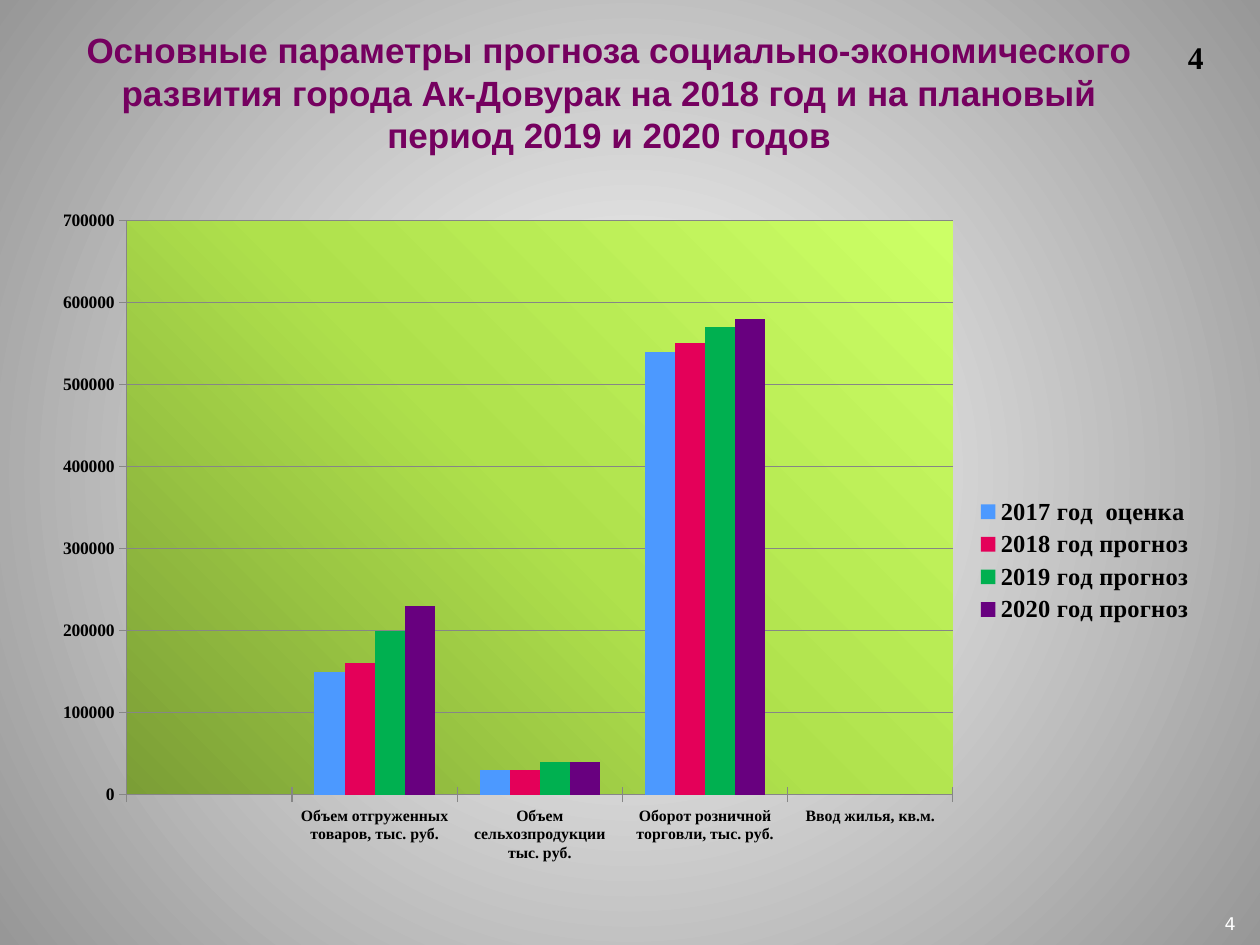
from dataclasses import dataclass

from pptx import Presentation
from pptx.chart.data import CategoryChartData
from pptx.dml.color import RGBColor
from pptx.enum.chart import XL_CHART_TYPE as ChartType, XL_LEGEND_POSITION as LegendPos, XL_TICK_MARK as Tick
from pptx.enum.text import PP_ALIGN as Align
from pptx.oxml import parse_xml
from pptx.oxml.ns import nsdecls, qn
from pptx.util import Inches, Pt

SERIF = "Times New Roman"
CATEGORIES = ["", "Объем отгруженных товаров, тыс. руб.", "Объем сельхозпродукции тыс. руб.",
              "Оборот розничной торговли, тыс. руб.", "Ввод жилья, кв.м."]


@dataclass
class Series:
    name: str
    color: str
    values: tuple


SERIES = [
    Series("2017 год  оценка", "4C99FF", (None, 150000, 30000, 540000, 0)),
    Series("2018 год прогноз", "E40059", (None, 160000, 30000, 550000, 0)),
    Series("2019 год прогноз", "00B050", (None, 200000, 40000, 570000, 0)),
    Series("2020 год прогноз", "68007F", (None, 230000, 40000, 580000, 0)),
]


def rgb(color: str) -> RGBColor:
    return RGBColor.from_string(color)


def set_font(font, size: float, color="000000", name=SERIF, bold=True) -> None:
    font.size, font.name, font.bold = Pt(size), name, bold
    font.color.rgb = rgb(color)


def add_text(s, text: str, box: tuple, margins=(0, 0), align=Align.LEFT, **fmt) -> None:
    tf = s.shapes.add_textbox(*map(Inches, box)).text_frame
    tf.word_wrap = True
    tf.margin_left = tf.margin_right = Inches(margins[0])
    tf.margin_top = tf.margin_bottom = Inches(margins[1])
    p = tf.paragraphs[0]
    p.alignment = align
    r = p.add_run()
    r.text = text
    set_font(r.font, **fmt)


def gradient(stops: list, direction: str) -> str:
    gs = "".join(f'<a:gs pos="{pos * 1000}"><a:srgbClr val="{c}"/></a:gs>' for pos, c in stops)
    return f'<a:gradFill rotWithShape="1"><a:gsLst>{gs}</a:gsLst>{direction}</a:gradFill>'


def set_background(s) -> None:
    center = '<a:path path="circle"><a:fillToRect l="50000" t="50000" r="50000" b="50000"/></a:path>'
    fill = gradient([(0, "FFFFFF"), (100, "979797")], center)
    s.element.cSld.insert(0, parse_xml(
        f'<p:bg {nsdecls("p", "a")}><p:bgPr>{fill}<a:effectLst/></p:bgPr></p:bg>'))


def style_plot_area(chart, x: float, y: float, w: float, h: float) -> None:
    area = chart.element.find(".//" + qn("c:plotArea"))
    for old in area.findall(qn("c:layout")):
        area.remove(old)
    place = "".join(f'<c:{tag} val="{val}"/>' for tag, val in (
        ("layoutTarget", "inner"), ("xMode", "edge"), ("yMode", "edge"),
        ("x", x), ("y", y), ("w", w), ("h", h)))
    area.insert(0, parse_xml(
        f'<c:layout {nsdecls("c")}><c:manualLayout>{place}</c:manualLayout></c:layout>'))
    fill = gradient([(0, "7B9E36"), (50, "AFE14C"), (100, "CCFF66")], '<a:lin ang="18900000" scaled="0"/>')
    area.append(parse_xml(f'<c:spPr {nsdecls("c", "a")}>{fill}<a:ln><a:noFill/></a:ln></c:spPr>'))


def style_line(line) -> None:
    line.color.rgb = rgb("868686")
    line.width = Pt(0.75)


def add_forecast_chart(s) -> None:
    data = CategoryChartData(number_format="General")
    data.categories = CATEGORIES
    for row in SERIES:
        data.add_series(row.name, row.values)
    box = map(Inches, (0.41, 1.66, 9.17, 5.58))
    chart = s.shapes.add_chart(ChartType.COLUMN_CLUSTERED, *box, data).chart
    chart.has_title = False
    set_font(chart.font, 10)
    plot = chart.plots[0]
    plot.vary_by_categories, plot.gap_width, plot.overlap = False, 150, 0
    for ser, row in zip(plot.series, SERIES):
        ser.format.fill.solid()
        ser.format.fill.fore_color.rgb = rgb(row.color)
        ser.invert_if_negative = False
    for axis, size in ((chart.category_axis, 9), (chart.value_axis, 10)):
        axis.major_tick_mark = Tick.CROSS
        set_font(axis.tick_labels.font, size)
        style_line(axis.format.line)
    axis = chart.value_axis
    axis.minimum_scale, axis.maximum_scale, axis.major_unit = 0, 700000, 100000
    axis.has_major_gridlines = True
    style_line(axis.major_gridlines.format.line)
    chart.has_legend = True
    chart.legend.position = LegendPos.RIGHT
    chart.legend.include_in_layout = False
    set_font(chart.legend.font, 14)
    style_plot_area(chart, 0.065, 0.016, 0.715, 0.817)


def main() -> None:
    """Build the slide with the city's development forecast."""
    prs = Presentation()
    prs.slide_width, prs.slide_height = Inches(10), Inches(7.5)
    s = prs.slides.add_slide(prs.slide_layouts[6])
    set_background(s)
    add_text(s, "Основные параметры прогноза социально-экономического развития города "
                "Ак-Довурак на 2018 год и на плановый период 2019 и 2020 годов",
             (0.5, 0.23, 8.67, 1.31), align=Align.CENTER,
             size=20, color="75005F", name="Arial")
    add_text(s, "4", (9.68, 7.25, 0.23, 0.17), margins=(0.04, 0),
             size=10, color="FFFFFF", name="DejaVu Sans", bold=False)
    add_text(s, "4", (9.33, 0.25, 0.5, 0.4), margins=(0.1, 0.05), size=18)
    add_forecast_chart(s)
    prs.save("out.pptx")


if __name__ == "__main__":
    main()
